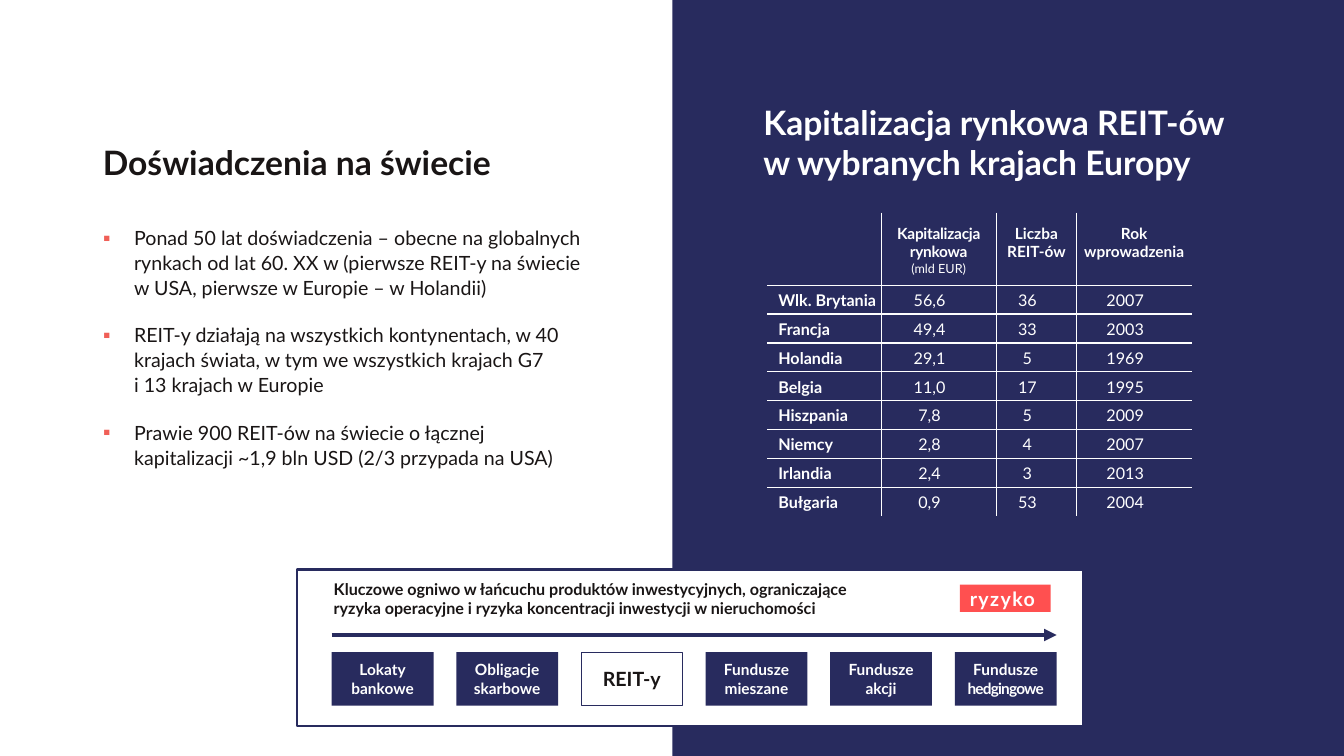
"""Build a slide on REIT experience worldwide and market capitalisation in Europe."""
from lxml import etree
from pptx import Presentation
from pptx.dml.color import RGBColor
from pptx.enum import shapes, text
from pptx.oxml import ns
from pptx.util import Inches, Pt

NAVY = RGBColor(0x28, 0x2B, 0x5E)
WHITE = RGBColor(0xFF, 0xFF, 0xFF)
INK = RGBColor(0x19, 0x15, 0x15)
CORAL = RGBColor(0xF0, 0x5F, 0x57)
RED = RGBColor(0xFF, 0x50, 0x50)
FONT = "Lato"
LEFT, CENTER = text.PP_ALIGN.LEFT, text.PP_ALIGN.CENTER
TOP, MIDDLE, BOTTOM = (text.MSO_ANCHOR.TOP, text.MSO_ANCHOR.MIDDLE,
                       text.MSO_ANCHOR.BOTTOM)

HEADING_LEFT = "Doświadczenia na świecie"
HEADING_RIGHT = "Kapitalizacja rynkowa REIT-ów\nw wybranych krajach Europy"
BULLETS = [
    "Ponad 50 lat doświadczenia – obecne na globalnych rynkach od lat 60. XX w "
    "(pierwsze REIT-y na świecie w USA, pierwsze w Europie – w Holandii)",
    "REIT-y działają na wszystkich kontynentach, w 40 krajach świata, "
    "w tym we wszystkich krajach G7\ni 13 krajach w Europie",
    "Prawie 900 REIT-ów na świecie o łącznej kapitalizacji ~1,9 bln USD "
    "(2/3 przypada na USA)",
]
HEADER = ["", "Kapitalizacja rynkowa\n", "Liczba\nREIT-ów", "Rok\nwprowadzenia"]
UNIT = "(mld EUR)"
COUNTRIES = [
    ("Wlk. Brytania", "56,6", "36", "2007"),
    ("Francja", "49,4", "33", "2003"),
    ("Holandia", "29,1", "5", "1969"),
    ("Belgia", "11,0", "17", "1995"),
    ("Hiszpania", "7,8", "5", "2009"),
    ("Niemcy", "2,8", "4", "2007"),
    ("Irlandia", "2,4", "3", "2013"),
    ("Bułgaria", "0,9", "53", "2004"),
]
COL_WIDTHS = [1.13, 1.14, 0.8, 1.14]
HEADER_HEIGHT, BODY_HEIGHT = 0.72, 2.29
PRODUCTS = ["Lokaty\nbankowe", "Obligacje\nskarbowe", "REIT-y",
            "Fundusze\nmieszane", "Fundusze\nakcji", "Fundusze\n"]
HIGHLIGHT = "REIT-y"
HEDGE = "hedgingowe"
CHAIN_TEXT = ("Kluczowe ogniwo w łańcuchu produktów inwestycyjnych, ograniczające\n"
              "ryzyka operacyjne i ryzyka koncentracji inwestycji w nieruchomości")
RISK = "ryzyko"
CHAIN_LEFT, CHAIN_RIGHT, PRODUCT_WIDTH = 3.29, 10.48, 1.01


def add_run(p, content, size, color, bold=True, spacing=0):
    """Add styled text to a paragraph, turning newlines into line breaks."""
    for i, line in enumerate(content.split("\n")):
        if i:
            p.add_line_break()
        if line:
            r = p.add_run()
            r.text = line
            r.font.name, r.font.size, r.font.bold = FONT, Pt(size), bold
            r.font.color.rgb = color
            if spacing:
                r.font._element.set("spc", str(round(spacing * 100)))


def place(sp, left, top, width, height):
    """Move and size a shape in inches."""
    sp.left, sp.top = Inches(left), Inches(top)
    sp.width, sp.height = Inches(width), Inches(height)


def add_box(s, left, top, width, height, fill, line_width=0):
    """Add a flat rectangle with an optional navy outline."""
    sp = s.shapes.add_shape(shapes.MSO_SHAPE.RECTANGLE, Inches(left), Inches(top),
                            Inches(width), Inches(height))
    sp.shadow.inherit = False
    sp.fill.solid()
    sp.fill.fore_color.rgb = fill
    if line_width:
        sp.line.color.rgb = NAVY
        sp.line.width = Pt(line_width)
    else:
        sp.line.fill.background()
    sp.text_frame.word_wrap = True
    sp.text_frame.vertical_anchor = MIDDLE
    return sp


def add_bullet(p):
    """Give a paragraph a hanging coral square bullet."""
    pPr = p._p.get_or_add_pPr()
    pPr.set("marL", str(Inches(0.31)))
    pPr.set("indent", str(-Inches(0.31)))
    color = etree.SubElement(pPr, ns.qn("a:buClr"))
    etree.SubElement(color, ns.qn("a:srgbClr"), val=str(CORAL))
    etree.SubElement(pPr, ns.qn("a:buFont"), typeface=FONT)
    etree.SubElement(pPr, ns.qn("a:buChar"), char="▪")


def set_borders(cell, inner):
    """Draw white lines on inner cell edges and none on outer ones."""
    tcPr = cell._tc.get_or_add_tcPr()
    for side in "LRTB":
        ln = etree.SubElement(tcPr, ns.qn("a:ln" + side), w=str(Pt(1)))
        if side in inner:
            fill = etree.SubElement(ln, ns.qn("a:solidFill"))
            etree.SubElement(fill, ns.qn("a:srgbClr"), val=str(WHITE))
        else:
            etree.SubElement(ln, ns.qn("a:noFill"))


def add_headings(s):
    """Fill the title and the heading of the dark half."""
    for sp, content, left, color in ((s.shapes.title, HEADING_LEFT, 0.92, INK),
                                     (s.placeholders[2], HEADING_RIGHT, 7.47, WHITE)):
        place(sp, left, 0.29, 4.95, 1.57)
        tf = sp.text_frame
        tf.auto_size = text.MSO_AUTO_SIZE.NONE
        tf.vertical_anchor = BOTTOM
        p = tf.paragraphs[0]
        pPr = p._p.get_or_add_pPr()
        pPr.set("marL", "0")
        pPr.set("indent", "0")
        etree.SubElement(pPr, ns.qn("a:buNone"))
        p.alignment, p.space_before = LEFT, Pt(0)
        add_run(p, content, 24, color)


def add_bullets(s):
    """Fill the bulleted list."""
    sp = s.placeholders[1]
    place(sp, 0.92, 2.18, 4.95, 2.6)
    tf = sp.text_frame
    tf.auto_size = text.MSO_AUTO_SIZE.NONE
    for i, item in enumerate(BULLETS):
        p = tf.add_paragraph() if i else tf.paragraphs[0]
        add_bullet(p)
        p.line_spacing = Pt(17.8)
        p.space_before, p.space_after = Pt(6 if i else 0), Pt(10)
        add_run(p, item, 14, INK, bold=False)


def add_market_table(s):
    """Add the table of European REIT markets."""
    rows = [HEADER] + COUNTRIES
    last_row, last_col = len(rows) - 1, len(HEADER) - 1
    table = s.shapes.add_table(len(rows), len(HEADER), Inches(7.61), Inches(2.11),
                               Inches(sum(COL_WIDTHS)),
                               Inches(HEADER_HEIGHT + BODY_HEIGHT)).table
    table.first_row = table.horz_banding = False
    for col, width in zip(table.columns, COL_WIDTHS):
        col.width = Inches(width)
    for i, row in enumerate(rows):
        table.rows[i].height = Inches(BODY_HEIGHT / last_row if i else HEADER_HEIGHT)
        for j, content in enumerate(row):
            cell = table.cell(i, j)
            edges = {"L": j > 0, "R": j < last_col, "T": i > 0, "B": i < last_row}
            set_borders(cell, [side for side, shown in edges.items() if shown])
            cell.fill.background()
            cell.vertical_anchor = MIDDLE if i else TOP
            cell.margin_left = Inches(0.01 if j or not i else 0.11)
            cell.margin_right = Inches(0.19 if i and j else 0.01)
            cell.margin_top = Inches(0.01 if i else 0.11)
            cell.margin_bottom = 0
            p = cell.text_frame.paragraphs[0]
            p.alignment = CENTER if j else LEFT
            add_run(p, content, 11.5 if i else 11, WHITE, bold=not (i and j),
                    spacing=-0.2 if (i, j) == (0, 1) else 0)
            if (i, j) == (0, 1):
                add_run(p, UNIT, 9, WHITE, bold=False)


def add_chain(s):
    """Add the panel ranking investment products by risk."""
    add_box(s, 2.95, 5.65, 7.79, 1.55, WHITE, 1.5)
    step = (CHAIN_RIGHT - CHAIN_LEFT - PRODUCT_WIDTH) / (len(PRODUCTS) - 1)
    for i, product in enumerate(PRODUCTS):
        chosen = product == HIGHLIGHT
        sp = add_box(s, CHAIN_LEFT + i * step, 6.47, PRODUCT_WIDTH, 0.53,
                     WHITE if chosen else NAVY, 0.5 if chosen else 0)
        p = sp.text_frame.paragraphs[0]
        p.alignment = CENTER
        add_run(p, product, 14 if chosen else 11, INK if chosen else WHITE)
    add_run(p, HEDGE, 11, WHITE, spacing=-0.6)

    arrow = s.shapes.add_connector(shapes.MSO_CONNECTOR.STRAIGHT, Inches(CHAIN_LEFT),
                                   Inches(6.3), Inches(CHAIN_RIGHT), Inches(6.3))
    arrow.line.color.rgb = NAVY
    arrow.line.width = Pt(3)
    etree.SubElement(arrow.line._get_or_add_ln(), ns.qn("a:tailEnd"), type="triangle")
    etree.SubElement(arrow._element.spPr, ns.qn("a:effectLst"))

    tf = add_box(s, 9.52, 5.8, 0.9, 0.27, RED).text_frame
    tf.margin_top = tf.margin_bottom = 0
    tf.paragraphs[0].alignment = LEFT
    add_run(tf.paragraphs[0], RISK, 14, WHITE, spacing=1)

    tf = s.shapes.add_textbox(Inches(3.11), Inches(5.68), Inches(7.39),
                              Inches(0.5)).text_frame
    tf.word_wrap = True
    tf.vertical_anchor = BOTTOM
    tf.margin_left = Inches(0.2)
    add_run(tf.paragraphs[0], CHAIN_TEXT, 11.5, INK)


def main():
    """Assemble and save the slide."""
    prs = Presentation()
    prs.slide_width, prs.slide_height = Inches(13.33), Inches(7.5)
    s = prs.slides.add_slide(prs.slide_layouts[3])
    panel = add_box(s, 6.67, 0, 6.66, 7.5, NAVY)
    s.shapes.title.element.addprevious(panel.element)
    add_headings(s)
    add_bullets(s)
    add_market_table(s)
    add_chain(s)
    prs.save("out.pptx")


if __name__ == "__main__":
    main()
